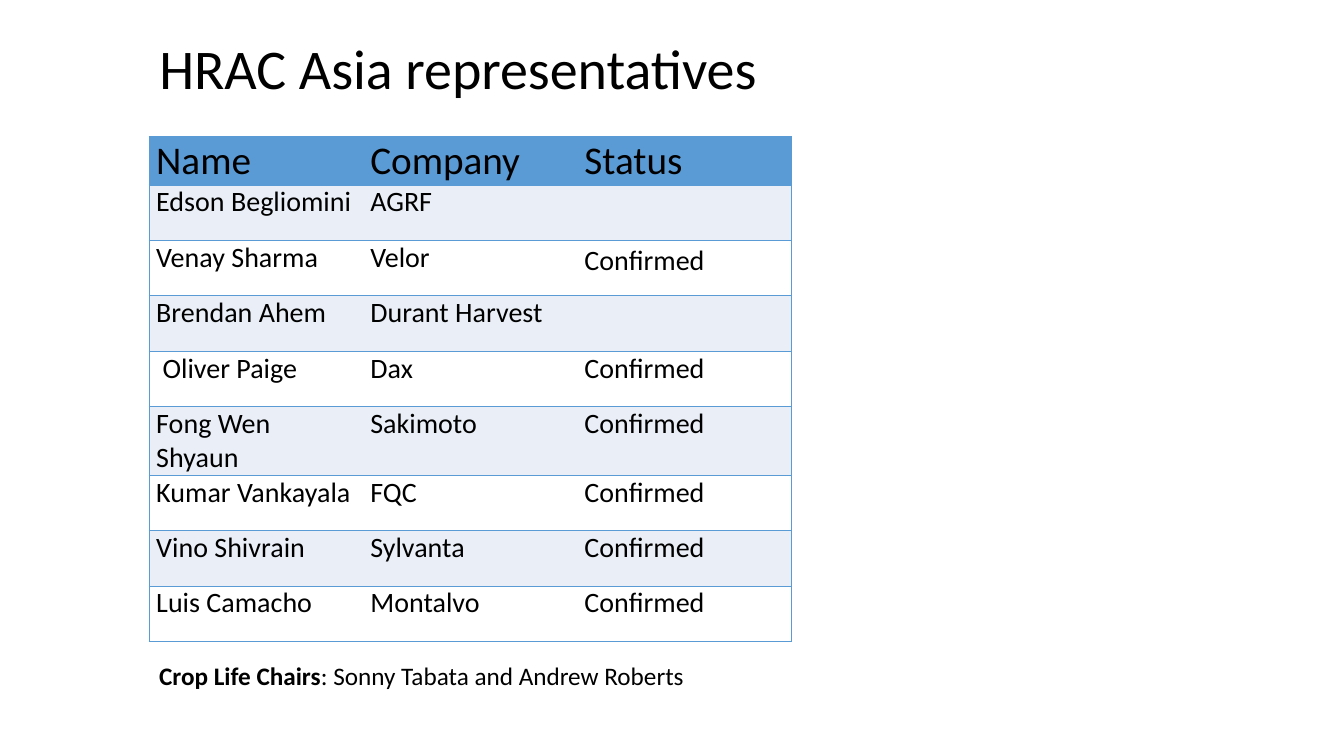
from lxml import etree
from pptx import Presentation
from pptx.dml.color import RGBColor
from pptx.enum.text import MSO_ANCHOR, MSO_AUTO_SIZE, PP_ALIGN
from pptx.oxml.ns import qn
from pptx.util import Inches, Pt

LEFT = PP_ALIGN.LEFT
MIDDLE = MSO_ANCHOR.MIDDLE
NO_FIT = MSO_AUTO_SIZE.NONE
GROW = MSO_AUTO_SIZE.SHAPE_TO_FIT_TEXT

BLACK = RGBColor(0x00, 0x00, 0x00)
WHITE = RGBColor(0xFF, 0xFF, 0xFF)
BLUE = RGBColor(0x5B, 0x9B, 0xD5)
PALE = RGBColor(0xEA, 0xEF, 0xF7)

HEADS = ("Name", "Company", "Status")
MEMBERS = (
    ("Edson Begliomini", "AGRF", ""),
    ("Venay Sharma", "Velor", "Confirmed"),
    ("Brendan Ahem", "Durant Harvest", ""),
    (" Oliver Paige", "Dax", "Confirmed"),
    ("Fong Wen Shyaun", "Sakimoto", "Confirmed"),
    ("Kumar Vankayala", "FQC", "Confirmed"),
    ("Vino Shivrain", "Sylvanta", "Confirmed"),
    ("Luis Camacho", "Montalvo", "Confirmed"),
)


def style(para, size):
    para.font.name = "Calibri"
    para.font.size = Pt(size)
    para.font.color.rgb = BLACK


def add_title(slide, left, top, width, height):
    title = slide.shapes.title
    title.left, title.top = Inches(left), Inches(top)
    title.width, title.height = Inches(width), Inches(height)
    frame = title.text_frame
    frame.text = "HRAC Asia representatives"
    frame.auto_size = NO_FIT
    frame.vertical_anchor = MIDDLE
    para = frame.paragraphs[0]
    para.alignment = LEFT
    para.line_spacing = 0.9
    style(para, 40)


def set_edges(cell, col):
    shown = {"L": col == 0, "R": col == len(HEADS) - 1, "T": True, "B": True}
    props = cell._tc.get_or_add_tcPr()
    for place, (side, seen) in enumerate(shown.items()):
        line = etree.Element(qn(f"a:ln{side}"), w=str(Pt(1)))
        if seen:
            fill = etree.SubElement(line, qn("a:solidFill"))
            etree.SubElement(fill, qn("a:srgbClr"), val=str(BLUE))
        else:
            etree.SubElement(line, qn("a:noFill"))
        props.insert(place, line)


def fill_cell(cell, text, size, color, col):
    cell.margin_left = cell.margin_right = Inches(0.07)
    cell.margin_top = cell.margin_bottom = 0
    cell.fill.solid()
    cell.fill.fore_color.rgb = color
    set_edges(cell, col)
    cell.text = text
    style(cell.text_frame.paragraphs[0], size)


def add_members(slide, left, top, width, height):
    rows = (HEADS,) + MEMBERS
    table = slide.shapes.add_table(
        len(rows), len(HEADS),
        Inches(left), Inches(top), Inches(width), Inches(height),
    ).table
    table.first_row = table.horz_banding = False
    for row, texts in enumerate(rows):
        table.rows[row].height = Inches(0.55 if row else 0.39)
        size = 20 if row else 28
        color = (PALE if row % 2 else WHITE) if row else BLUE
        for col, text in enumerate(texts):
            fill_cell(table.cell(row, col), text, size, color, col)
    table.cell(2, 2).margin_top = Inches(0.03)


def add_chairs(slide, left, top, width, height):
    box = slide.shapes.add_textbox(
        Inches(left), Inches(top), Inches(width), Inches(height))
    frame = box.text_frame
    frame.word_wrap = True
    frame.auto_size = GROW
    para = frame.paragraphs[0]
    style(para, 18)
    label = para.add_run()
    label.text = "Crop Life Chairs"
    label.font.bold = True
    para.add_run().text = ": Sonny Tabata and Andrew Roberts"


def main():
    deck = Presentation()
    deck.slide_width, deck.slide_height = Inches(13.33), Inches(7.5)
    slide = deck.slides.add_slide(deck.slide_layouts[5])
    add_title(slide, 1.48, -0.02, 12.55, 1.45)
    add_members(slide, 1.48, 1.36, 6.37, 4.79)
    add_chairs(slide, 1.48, 6.5, 6.76, 0.71)
    deck.save("out.pptx")


if __name__ == "__main__":
    main()
